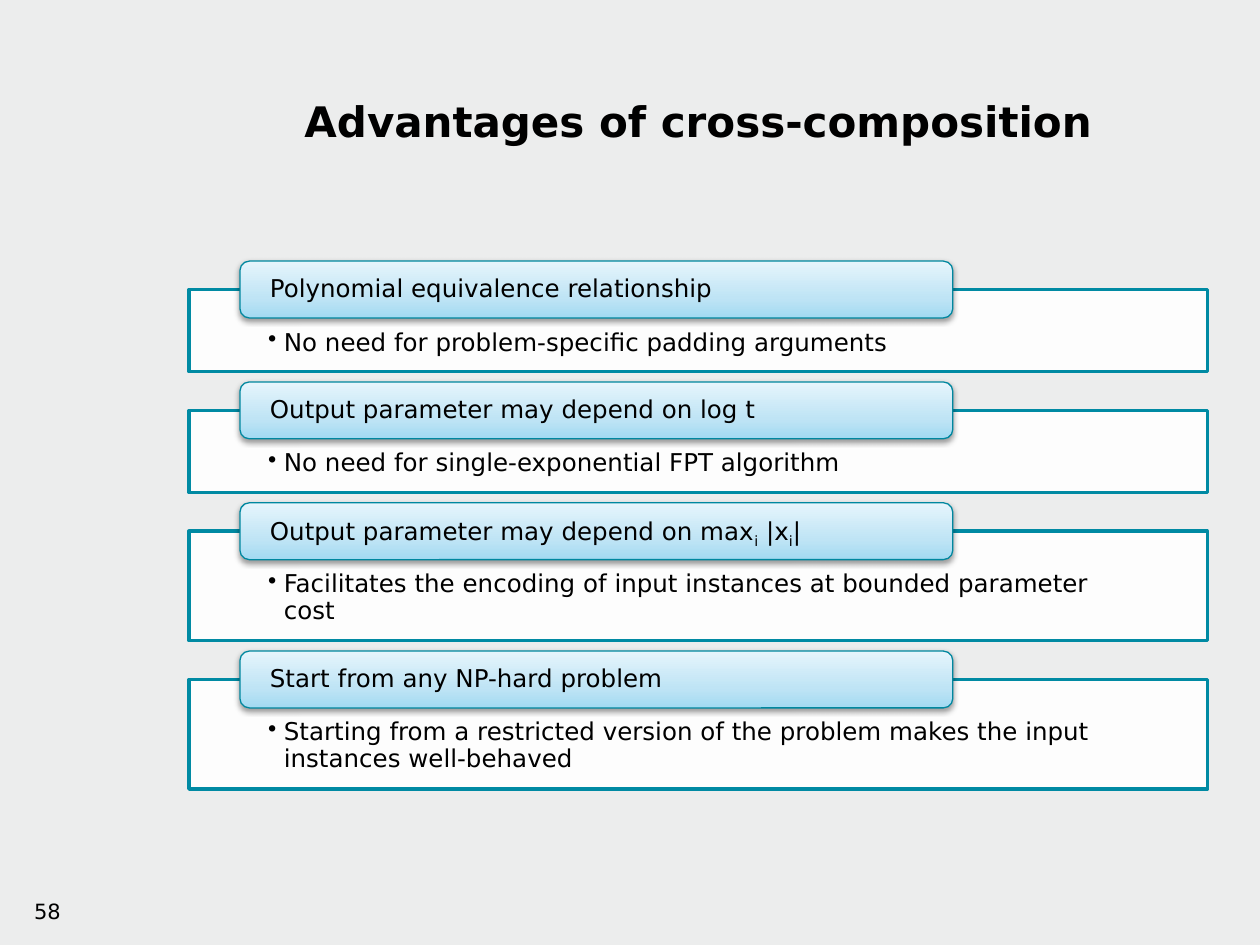
from pptx import Presentation
from pptx.dml.color import RGBColor
from pptx.enum.shapes import MSO_SHAPE
from pptx.enum.text import MSO_ANCHOR, PP_ALIGN
from pptx.oxml import parse_xml
from pptx.oxml.ns import nsdecls, qn
from pptx.util import Pt

RECT, ROUNDED = MSO_SHAPE.RECTANGLE, MSO_SHAPE.ROUNDED_RECTANGLE
TOP, MIDDLE = MSO_ANCHOR.TOP, MSO_ANCHOR.MIDDLE
LEFT, CENTER, RIGHT = PP_ALIGN.LEFT, PP_ALIGN.CENTER, PP_ALIGN.RIGHT

BLACK = RGBColor(0x00, 0x00, 0x00)
WHITE = RGBColor(0xFF, 0xFF, 0xFF)
BACKGROUND = RGBColor(0xEC, 0xED, 0xED)
BOX_LINE = RGBColor(0x00, 0x8A, 0xA3)
LABEL_LINE = RGBColor(0x00, 0x87, 0x9F)
GRADIENT = [
    (0, RGBColor(0xA2, 0xDA, 0xF2)),
    (35, RGBColor(0xBF, 0xE4, 0xF5)),
    (100, RGBColor(0xE6, 0xF5, 0xFC)),
]

ADVANTAGES = [
    (["Polynomial equivalence relationship"],
     "No need for problem-specific padding arguments", 46.9),
    (["Output parameter may depend on log t"],
     "No need for single-exponential FPT algorithm", 46.9),
    (["Output parameter may depend on max", "i", " |x", "i", "|"],
     "Facilitates the encoding of input instances at bounded parameter cost", 62.6),
    (["Start from any NP-hard problem"],
     "Starting from a restricted version of the problem makes the input "
     "instances well-behaved", 62.6),
]
FIRST_TOP = 165.5
GAP = 22.14
LABEL_RISE = 16.3


class SlideBuilder:
    font = "DejaVu Sans"

    def __init__(self, slide):
        self.slide = slide
        slide.background.fill.solid()
        slide.background.fill.fore_color.rgb = BACKGROUND

    def add_text(self, tf, runs, size, align=LEFT, anchor=TOP, bold=False):
        tf.word_wrap = True
        tf.vertical_anchor = anchor
        p = tf.paragraphs[0]
        p.alignment = align
        for i, text in enumerate(runs):
            r = p.add_run()
            r.text = text
            r.font.name = self.font
            r.font.size = Pt(size)
            r.font.bold = bold
            r.font.color.rgb = BLACK
            if i % 2:
                r.font._element.set("baseline", "-25000")
        return p

    def inset(self, tf, side, top, bottom):
        tf.margin_left = tf.margin_right = Pt(side)
        tf.margin_top, tf.margin_bottom = Pt(top), Pt(bottom)

    def title(self, text, left, top, width, height):
        sp = self.slide.shapes.title
        sp.left, sp.top, sp.width, sp.height = map(Pt, (left, top, width, height))
        self.add_text(sp.text_frame, [text], 24, CENTER, MIDDLE, True)

    def number(self, text, left, top, width, height):
        sp = self.slide.shapes.add_textbox(*map(Pt, (left, top, width, height)))
        self.add_text(sp.text_frame, [text], 12, RIGHT)

    def box(self, text, left, top, width, height):
        sp = self.slide.shapes.add_shape(RECT, *map(Pt, (left, top, width, height)))
        sp.shadow.inherit = False
        sp.fill.solid()
        sp.fill.fore_color.rgb = WHITE
        color = sp._element.spPr.find(".//" + qn("a:srgbClr"))
        color.append(parse_xml(f'<a:alpha {nsdecls("a")} val="90000"/>'))
        sp.line.color.rgb = BOX_LINE
        sp.line.width = Pt(2)
        self.inset(sp.text_frame, 45.2, 23, 7.8)
        p = self.add_text(sp.text_frame, [text], 14)
        p.level = 1
        p.line_spacing = 0.9
        pPr = p._p.get_or_add_pPr()
        pPr.set("marL", str(Pt(9)))
        pPr.set("indent", str(Pt(-9)))
        pPr.append(parse_xml(f'<a:buChar {nsdecls("a")} char="•"/>'))

    def label(self, runs, left, top, width, height):
        sp = self.slide.shapes.add_shape(ROUNDED, *map(Pt, (left, top, width, height)))
        stops = "".join(
            f'<a:gs pos="{pos * 1000}"><a:srgbClr val="{color}"/></a:gs>'
            for pos, color in GRADIENT)
        spPr = sp._element.spPr
        spPr.append(parse_xml(
            f'<a:gradFill {nsdecls("a")} rotWithShape="1"><a:gsLst>{stops}</a:gsLst>'
            '<a:lin ang="16200000" scaled="0"/></a:gradFill>'))
        sp.line.color.rgb = LABEL_LINE
        sp.line.width = Pt(0.75)
        spPr.append(parse_xml(
            f'<a:effectLst {nsdecls("a")}><a:outerShdw blurRad="{Pt(3.1)}" '
            f'dist="{Pt(1.6)}" dir="5400000" rotWithShape="0">'
            f'<a:srgbClr val="{BLACK}"><a:alpha val="38000"/></a:srgbClr>'
            '</a:outerShdw></a:effectLst>'))
        self.inset(sp.text_frame, 15.6, 0, 0)
        p = self.add_text(sp.text_frame, runs, 14, anchor=MIDDLE)
        p.line_spacing = 0.9


def main():
    prs = Presentation()
    prs.slide_width, prs.slide_height = Pt(720), Pt(540)
    s = SlideBuilder(prs.slides.add_slide(prs.slide_layouts[5]))
    s.number("58", 0, 510, 41.8, 30)
    s.title("Advantages of cross-composition", 108, 24, 582, 90)
    top = FIRST_TOP
    for heading, detail, height in ADVANTAGES:
        s.box(detail, 108, top, 582, height)
        s.label(heading, 137.1, top - LABEL_RISE, 407.4, 32.5)
        top += height + GAP
    prs.save("out.pptx")


if __name__ == "__main__":
    main()
